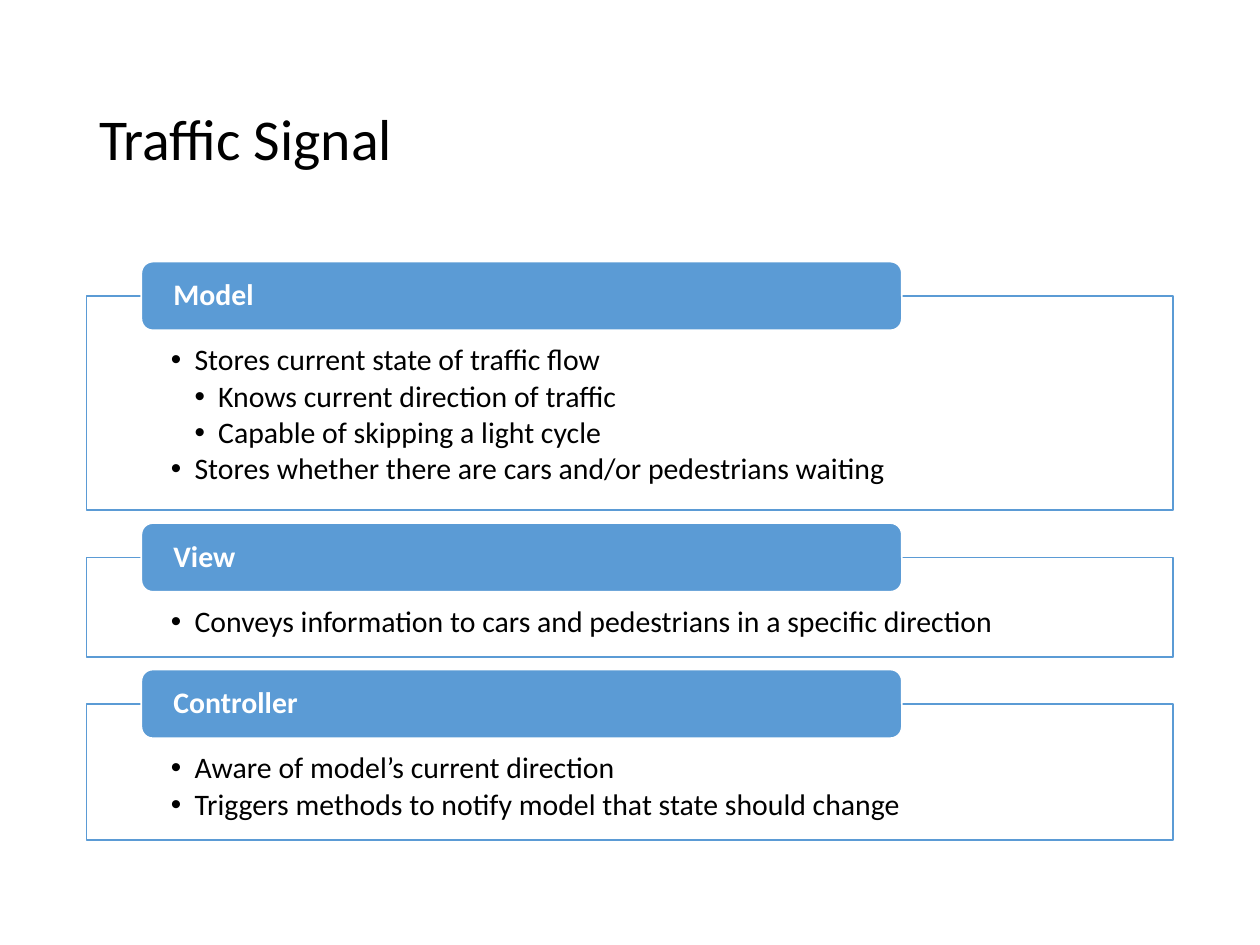
from lxml import etree
from pptx import Presentation
from pptx.dml.color import RGBColor
from pptx.enum.shapes import MSO_SHAPE
from pptx.enum.text import MSO_ANCHOR, MSO_AUTO_SIZE, PP_ALIGN
from pptx.oxml.ns import qn
from pptx.util import Pt

RECTANGLE = MSO_SHAPE.RECTANGLE
ROUNDED = MSO_SHAPE.ROUNDED_RECTANGLE
LEFT = PP_ALIGN.LEFT
TOP, MIDDLE = MSO_ANCHOR.TOP, MSO_ANCHOR.MIDDLE

# Content: heading, box height, (level, text) points
TITLE = "Traffic Signal"
SECTIONS = [
    ("Model", 122.4, [
        (0, "Stores current state of traffic flow"),
        (1, "Knows current direction of traffic"),
        (1, "Capable of skipping a light cycle"),
        (0, "Stores whether there are cars and/or pedestrians waiting"),
    ]),
    ("View", 56.7, [
        (0, "Conveys information to cars and pedestrians in a specific direction"),
    ]),
    ("Controller", 77.7, [
        (0, "Aware of model’s current direction"),
        (0, "Triggers methods to notify model that state should change"),
    ]),
]

# Layout and style
FONT = "Calibri"
BLUE, WHITE, BLACK = "5B9BD5", "FFFFFF", "000000"
BOX_LEFT, BOX_WIDTH, FIRST_TOP, GAP = 49.5, 621, 169.2, 27
TAB_LEFT, TAB_WIDTH, TAB_HEIGHT, TAB_RISE = 80.8, 434.6, 39.3, 19.7
INDENT = 13.5


def colour(value):
    return RGBColor.from_string(value)


def add_run(paragraph, text, size, text_colour, bold=False):
    paragraph.alignment = LEFT
    paragraph.line_spacing = 0.9
    run = paragraph.add_run()
    run.text = text
    run.font.name = FONT
    run.font.size = Pt(size)
    run.font.bold = bold
    run.font.color.rgb = colour(text_colour)


def add_bullet(paragraph, level):
    paragraph.level = level
    paragraph.space_after = Pt(2.4)
    properties = paragraph._p.get_or_add_pPr()
    properties.set("marL", str(Pt(INDENT * (level + 1))))
    properties.set("indent", str(-Pt(INDENT)))
    etree.SubElement(properties, qn("a:buFont")).set("typeface", "Arial")
    etree.SubElement(properties, qn("a:buChar")).set("char", "•")


def set_frame(frame, anchor, left, top, right, bottom):
    frame.word_wrap = True
    frame.auto_size = MSO_AUTO_SIZE.NONE
    frame.vertical_anchor = anchor
    frame.margin_left, frame.margin_top = Pt(left), Pt(top)
    frame.margin_right, frame.margin_bottom = Pt(right), Pt(bottom)


def add_panel(slide, kind, left, top, width, height, fill, line):
    shape = slide.shapes.add_shape(kind, Pt(left), Pt(top), Pt(width), Pt(height))
    shape.shadow.inherit = False
    shape.fill.solid()
    shape.fill.fore_color.rgb = colour(fill)
    shape.line.color.rgb = colour(line)
    shape.line.width = Pt(1)
    return shape


def add_section(slide, top, heading, height, points):
    # Outlined box with the bulleted list
    box = add_panel(slide, RECTANGLE, BOX_LEFT, top, BOX_WIDTH, height, WHITE, BLUE)
    fill_colour = box._element.spPr.find(qn("a:solidFill"))[0]
    etree.SubElement(fill_colour, qn("a:alpha")).set("val", "90000")
    frame = box.text_frame
    set_frame(frame, TOP, 48.2, 28, 48.2, 9)
    for index, (level, text) in enumerate(points):
        paragraph = frame.add_paragraph() if index else frame.paragraphs[0]
        add_run(paragraph, text, 17, BLACK)
        add_bullet(paragraph, level)

    # Heading tab across the top edge
    tab = add_panel(slide, ROUNDED, TAB_LEFT, top - TAB_RISE,
                    TAB_WIDTH, TAB_HEIGHT, BLUE, WHITE)
    set_frame(tab.text_frame, MIDDLE, 16.4, 0, 16.4, 0)
    add_run(tab.text_frame.paragraphs[0], heading, 17, WHITE, bold=True)


def main():
    presentation = Presentation()
    presentation.slide_width, presentation.slide_height = Pt(720), Pt(540)
    slide = presentation.slides.add_slide(presentation.slide_layouts[5])

    # Title
    title = slide.shapes.title
    title.left, title.top = Pt(BOX_LEFT), Pt(28.8)
    title.width, title.height = Pt(BOX_WIDTH), Pt(104.4)
    set_frame(title.text_frame, MIDDLE, 7.2, 3.6, 7.2, 3.6)
    add_run(title.text_frame.paragraphs[0], TITLE, 33, BLACK)

    # Sections, stacked with equal gaps
    top = FIRST_TOP
    for heading, height, points in SECTIONS:
        add_section(slide, top, heading, height, points)
        top += height + GAP

    presentation.save("out.pptx")


if __name__ == "__main__":
    main()
